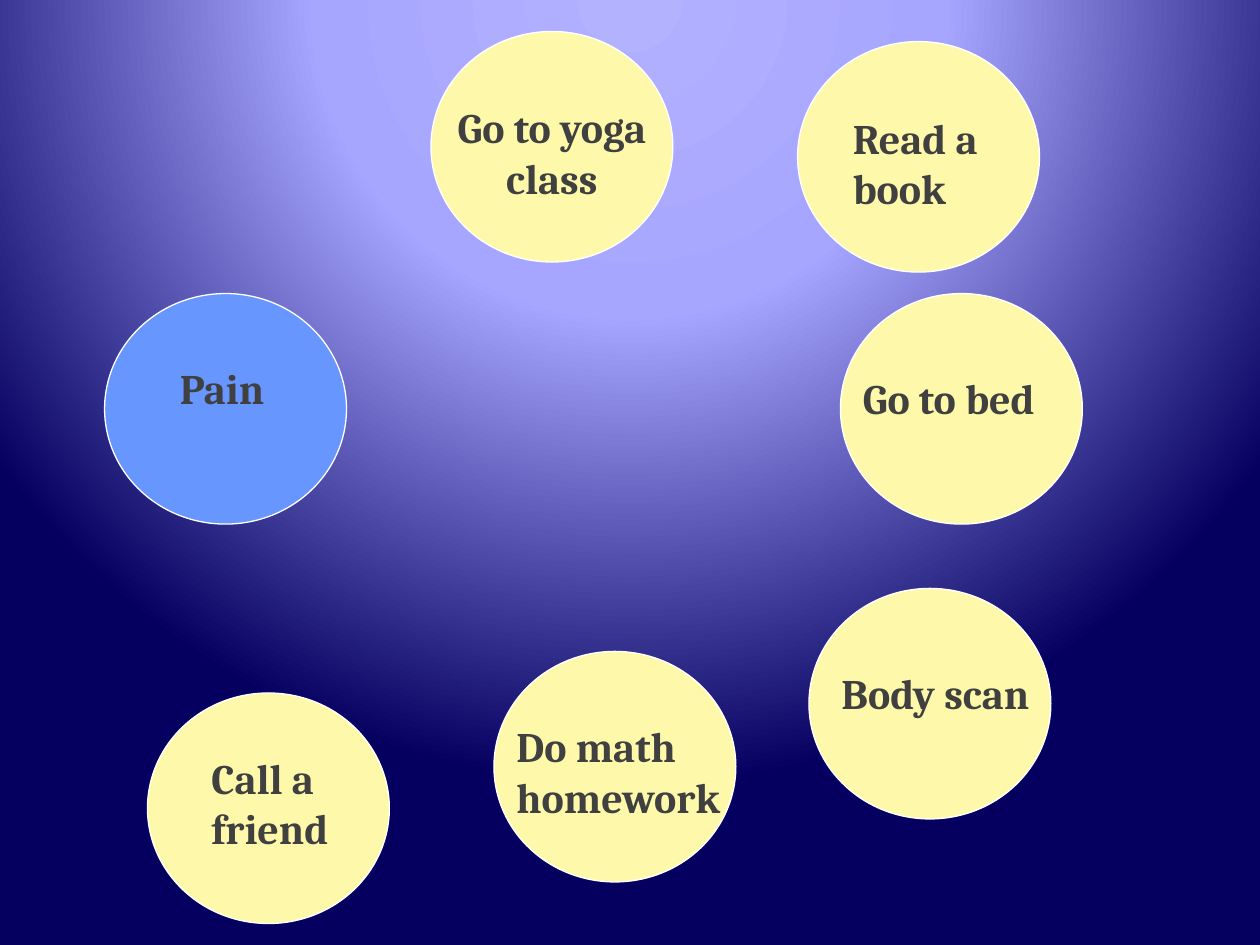
"""Build a slide of labelled activity circles on a radial gradient."""
from dataclasses import dataclass

from pptx import Presentation
from pptx.dml.color import RGBColor
from pptx.enum.shapes import MSO_SHAPE
from pptx.enum.text import MSO_AUTO_SIZE, PP_ALIGN
from pptx.oxml import parse_xml
from pptx.oxml.ns import nsdecls
from pptx.shapes.group import GroupShape
from pptx.slide import Slide
from pptx.util import Inches, Pt

CIRCLE_WIDTH, CIRCLE_HEIGHT = 1.92, 1.83
BLUE, YELLOW, WHITE, GREY = "6796FF", "FEF9AA", "FFFFFF", "404040"
GLOW = ((0, "B3B2FF"), (40, "A6A5FF"), (100, "05005F"))


@dataclass(frozen=True)
class Activity:
    """A circle and the place of its label, in inches."""

    label: str
    left: float
    top: float
    label_left: float
    label_top: float
    label_width: float = CIRCLE_WIDTH
    label_height: float = 0.5
    fill: str = YELLOW
    align: PP_ALIGN = PP_ALIGN.LEFT


ACTIVITIES = (
    Activity("Pain", 0.83, 2.33, 1.33, 2.83, label_width=1, fill=BLUE),
    Activity("Go to bed", 6.67, 2.33, 6.75, 2.91),
    Activity("Do math homework", 3.92, 5.17, 4, 5.67, label_height=0.91),
    Activity("Read a book", 6.33, 0.33, 6.67, 0.84, 1.33, 0.91),
    Activity("Call a friend", 1.17, 5.5, 1.58, 5.92, 1.33, 0.91),
    Activity("Go to yoga class", 3.42, 0.25, 3.42, 0.76,
             label_height=0.91, align=PP_ALIGN.CENTER),
    Activity("Body scan", 6.42, 4.67, 6.58, 5.25),
)


def color(value: str) -> RGBColor:
    """Turn a hex string into a colour."""
    return RGBColor.from_string(value)


def set_glow(page: Slide) -> None:
    """Give the page a circular gradient centred above its top edge."""
    stops = "".join(
        f'<a:gs pos="{position * 1000}"><a:srgbClr val="{color(value)}"/></a:gs>'
        for position, value in GLOW
    )
    background = parse_xml(
        f'<p:bg {nsdecls("p", "a")}><p:bgPr><a:gradFill rotWithShape="1">'
        f'<a:gsLst>{stops}</a:gsLst><a:path path="circle">'
        '<a:fillToRect l="50000" t="-80000" r="50000" b="180000"/></a:path>'
        "</a:gradFill><a:effectLst/></p:bgPr></p:bg>"
    )
    page.element.cSld.insert(0, background)


def add_label(group: GroupShape, text: str, *, left: float, top: float,
              width: float, height: float, align: PP_ALIGN) -> None:
    """Add a bold wrapped label."""
    box = group.shapes.add_textbox(
        Inches(left), Inches(top), Inches(width), Inches(height))
    frame = box.text_frame
    frame.word_wrap = True
    frame.auto_size = MSO_AUTO_SIZE.SHAPE_TO_FIT_TEXT
    para = frame.paragraphs[0]
    para.alignment = align
    span = para.add_run()
    span.text = text
    span.font.name = "Cambria"
    span.font.size = Pt(24)
    span.font.bold = True
    span.font.color.rgb = color(GREY)


def add_activity(page: Slide, activity: Activity) -> None:
    """Draw a circle grouped with its label."""
    group = page.shapes.add_group_shape()
    circle = group.shapes.add_shape(
        MSO_SHAPE.OVAL, Inches(activity.left), Inches(activity.top),
        Inches(CIRCLE_WIDTH), Inches(CIRCLE_HEIGHT))
    circle.shadow.inherit = False
    circle.fill.solid()
    circle.fill.fore_color.rgb = color(activity.fill)
    circle.line.color.rgb = color(WHITE)
    circle.line.width = Pt(0.75)
    add_label(group, activity.label, left=activity.label_left,
              top=activity.label_top, width=activity.label_width,
              height=activity.label_height, align=activity.align)


def main() -> None:
    """Build and save the deck."""
    deck = Presentation()
    deck.slide_width, deck.slide_height = Inches(10), Inches(7.5)
    page = deck.slides.add_slide(deck.slide_layouts[6])
    set_glow(page)
    for activity in ACTIVITIES:
        add_activity(page, activity)
    deck.save("out.pptx")


if __name__ == "__main__":
    main()
